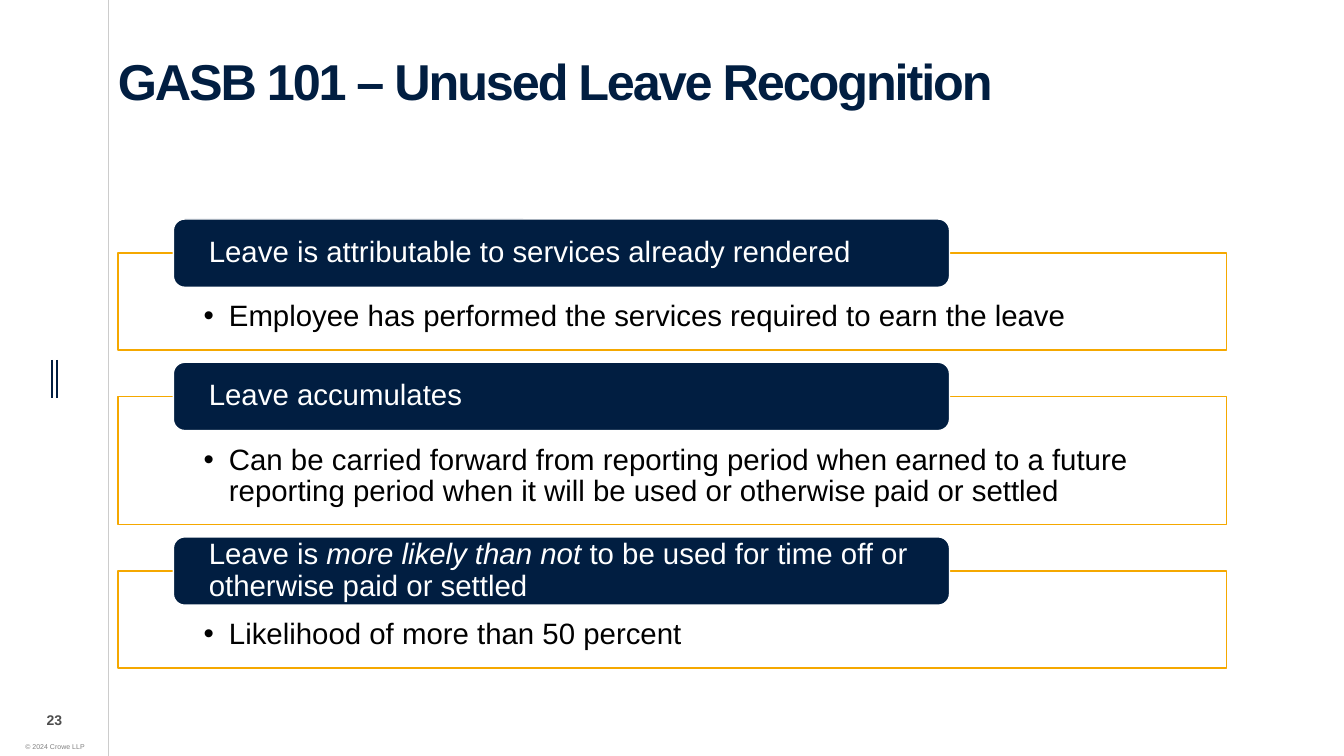
from lxml import etree
from pptx import Presentation
from pptx import util as u
from pptx.dml.color import RGBColor
from pptx.enum import shapes, text
from pptx.oxml.ns import qn

Cm, Pt = u.Cm, u.Pt
COLORS = {"navy": "011E41", "amber": "F5A800", "white": "FFFFFF", "black": "000000",
          "rule": "CCCCCC", "number": "4D4D4D", "grey": "808080"}


def rgb(name):
    return RGBColor.from_string(COLORS[name])


def write(sp, runs, size, color, insets=(0, 0, 0, 0), anchor="TOP", align="LEFT",
          spacing=1.0, bold=False, bullet=False, wrap=True):
    """Fill one paragraph with (words, italic) runs and format it."""
    tf = sp.text_frame
    tf.word_wrap = wrap
    tf.auto_size = text.MSO_AUTO_SIZE.NONE
    tf.vertical_anchor = text.MSO_ANCHOR[anchor]
    tf.margin_left, tf.margin_top, tf.margin_right, tf.margin_bottom = map(Cm, insets)
    p = tf.paragraphs[0]
    p.alignment = text.PP_ALIGN[align]
    p.line_spacing = spacing
    if bullet:
        pPr = p._p.get_or_add_pPr()
        pPr.set("marL", str(Cm(0.64)))
        pPr.set("indent", str(-Cm(0.64)))
        etree.SubElement(pPr, qn("a:buFont")).set("typeface", "Arial")
        etree.SubElement(pPr, qn("a:buChar")).set("char", "•")
    for words, italic in runs:
        r = p.add_run()
        r.text = words
        r.font.name, r.font.size = "Arial", Pt(size)
        r.font.bold, r.font.italic = bold, italic
        r.font.color.rgb = rgb(color)
    return p


prs = Presentation()
prs.slide_width, prs.slide_height = Cm(33.87), Cm(19.05)
s = prs.slides.add_slide(prs.slide_layouts[5])

# Left margin: double mark and full-height rule
for x, top, bottom, color, width in [(1.3, 9.07, 10.03, "navy", 1.5),
                                     (1.43, 9.07, 10.03, "navy", 1.5),
                                     (2.74, 0, 19.05, "rule", 0.5)]:
    line = s.shapes.add_connector(shapes.MSO_CONNECTOR.STRAIGHT,
                                  Cm(x), Cm(top), Cm(x), Cm(bottom))
    line.line.color.rgb = rgb(color)
    line.line.width = Pt(width)
    etree.SubElement(line._element.spPr, qn("a:effectLst"))

# Title
title = s.shapes.title
title.left, title.top, title.width, title.height = Cm(2.97), Cm(1.02), Cm(27.94), Cm(3.02)
p = write(title, [("GASB 101 – Unused Leave Recognition", False)], 36, "navy",
          insets=(0, 0.53, 0, 0), spacing=0.8, bold=True)
p.runs[0].font._element.set("spc", "-150")

# Criteria: outlined detail box with a heading tab over its top edge
criteria = [
    ([("Leave is attributable to services already rendered", False)],
     "Employee has performed the services required to earn the leave", 2.44),
    ([("Leave accumulates", False)],
     "Can be carried forward from reporting period when earned to a future "
     "reporting period when it will be used or otherwise paid or settled", 3.23),
    ([("Leave is ", False), ("more likely than not", True),
      (" to be used for time off or otherwise paid or settled", False)],
     "Likelihood of more than 50 percent", 2.44),
]
GAP, TAB_RISE = 1.17, 0.86
top = 6.38
for heading, detail, height in criteria:
    box = s.shapes.add_shape(shapes.MSO_SHAPE.RECTANGLE,
                             Cm(2.97), Cm(top), Cm(27.94), Cm(height))
    tab = s.shapes.add_shape(shapes.MSO_SHAPE.ROUNDED_RECTANGLE,
                             Cm(4.37), Cm(top - TAB_RISE), Cm(19.56), Cm(2 * TAB_RISE))
    for sp, fill, outline in [(box, "white", "amber"), (tab, "navy", "white")]:
        sp.shadow.inherit = False
        sp.fill.solid()
        sp.fill.fore_color.rgb = rgb(fill)
        sp.line.color.rgb = rgb(outline)
        sp.line.width = Pt(1)
    write(box, [(detail, False)], 21, "black", insets=(2.16, 1.22, 2.16, 0.41),
          spacing=0.9, bullet=True)
    write(tab, heading, 21, "white", insets=(0.81, 0.08, 0.81, 0.08),
          anchor="MIDDLE", spacing=0.9)
    top += height + GAP

# Page number and copyright line
number = s.shapes.add_textbox(Cm(0.66), Cm(17.83), Cm(1.42), Cm(0.64))
write(number, [("23", False)], 10, "number", anchor="MIDDLE", align="CENTER", bold=True)
notice = s.shapes.add_textbox(Cm(0.36), Cm(18.57), Cm(2.06), Cm(0.48))
write(notice, [("© 2024 Crowe LLP", False)], 5, "grey",
      insets=(0.25, 0.13, 0.25, 0.13), align="CENTER", wrap=False)

prs.save("out.pptx")
